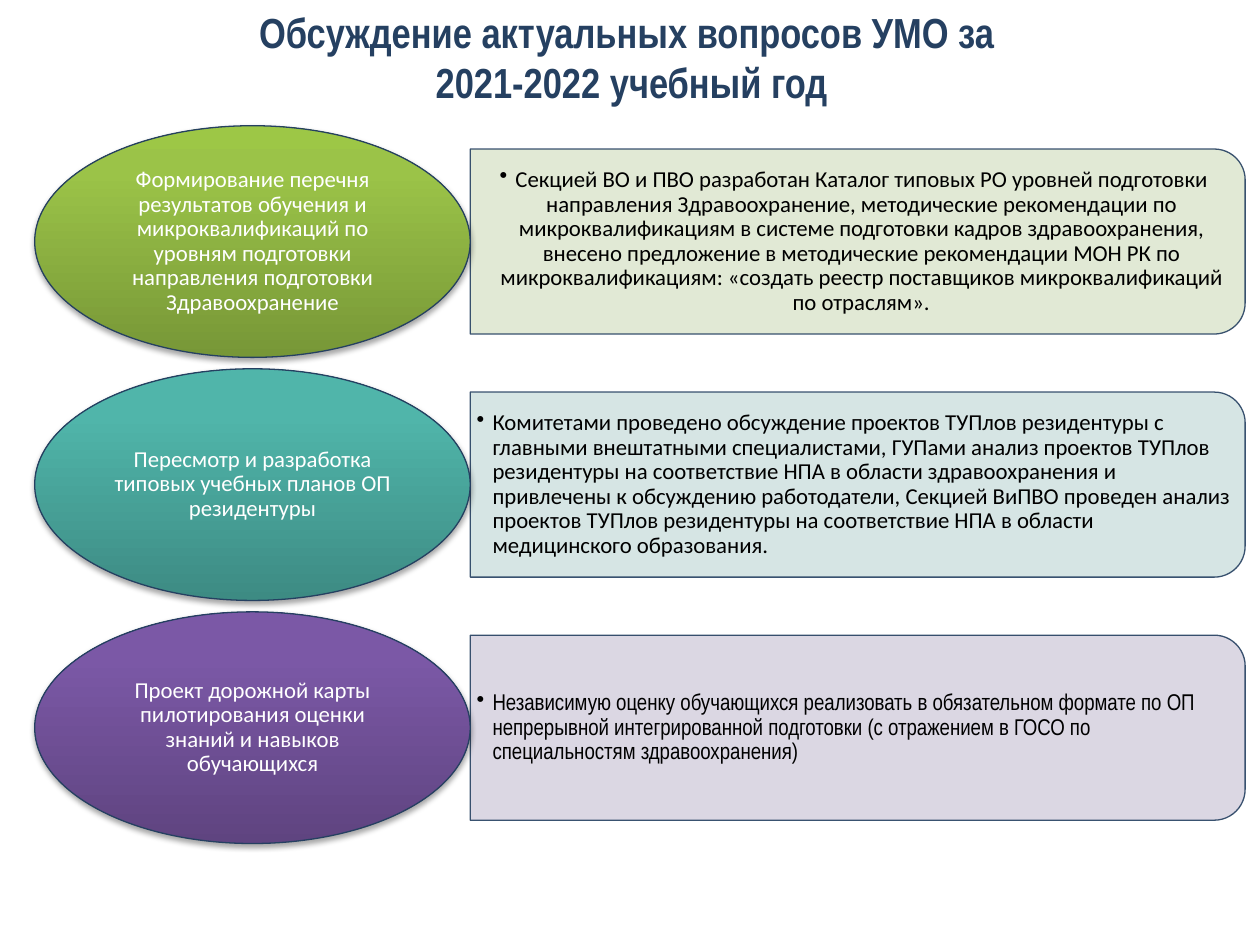
from dataclasses import dataclass

from pptx import Presentation
from pptx.dml.color import RGBColor
from pptx.enum.shapes import MSO_SHAPE
from pptx.enum.text import MSO_ANCHOR, PP_ALIGN
from pptx.oxml import parse_xml
from pptx.oxml.ns import nsdecls, qn
from pptx.util import Cm, Pt


@dataclass(frozen=True)
class Theme:
    navy: str = "254061"
    black: str = "000000"
    white: str = "FFFFFF"
    heading_font: str = "Arial Narrow"
    body_font: str = "Calibri"
    title_size: int = 24
    body_size: int = 13
    outline: float = 0.75


def color_xml(color, alpha):
    return (f'<a:srgbClr {nsdecls("a")} val="{color}">'
            f'<a:alpha val="{alpha * 1000}"/></a:srgbClr>')


def write_text(frame, text, *, font, size, color, bold=False, align=PP_ALIGN.CENTER,
               anchor=MSO_ANCHOR.MIDDLE, spacing=0.9, margins=(0.13, 0.08), bullet=False):
    frame.word_wrap = True
    frame.vertical_anchor = anchor
    frame.margin_left = frame.margin_right = Cm(margins[0])
    frame.margin_top = frame.margin_bottom = Cm(margins[1])
    paragraph = frame.paragraphs[0]
    paragraph.text = text
    paragraph.alignment = align
    paragraph.line_spacing = spacing
    for run in paragraph.runs:
        run.font.name = font
        run.font.size = Pt(size)
        run.font.bold = bold
        run.font.color.rgb = RGBColor.from_string(color)
    if bullet:
        properties = paragraph._p.get_or_add_pPr()
        properties.set("marL", str(Cm(0.32)))
        properties.set("indent", str(-Cm(0.32)))
        properties.append(parse_xml(f'<a:buChar {nsdecls("a")} char="•"/>'))


class SlideBuilder:
    """Draws the styled elements of one slide."""

    def __init__(self, slide, theme):
        self.slide = slide
        self.theme = theme

    def add_outlined(self, kind, left, top, width, height):
        shape = self.slide.shapes.add_shape(kind, Cm(left), Cm(top), Cm(width), Cm(height))
        shape.shadow.inherit = False
        shape.line.color.rgb = RGBColor.from_string(self.theme.navy)
        shape.line.width = Pt(self.theme.outline)
        return shape

    def add_text(self, text, left, top, width, height, **text_format):
        box = self.slide.shapes.add_textbox(Cm(left), Cm(top), Cm(width), Cm(height))
        write_text(box.text_frame, text, **text_format)

    def add_title(self, text):
        theme = self.theme
        self.add_text(text, 1.3, 0, 22.86, 3.18, font=theme.heading_font,
                      size=theme.title_size, color=theme.navy, bold=True,
                      anchor=MSO_ANCHOR.TOP, spacing=1.0, margins=(0.25, 0.13))

    def add_panel(self, text, middle, color, font, align):
        left, width, height = 9.48, 15.62, 3.73
        panel = self.add_outlined(MSO_SHAPE.ROUND_2_SAME_RECTANGLE,
                                  left + (width - height) / 2, middle - width / 2,
                                  height, width)
        panel.rotation = 90
        panel.fill.solid()
        panel.fill.fore_color.rgb = RGBColor.from_string(color)
        for fill in panel.element.spPr.iter(qn("a:solidFill")):
            fill[:] = [parse_xml(color_xml(fill[0].get("val"), 90))]
        text_height = 3.38
        self.add_text(text, left, middle - text_height / 2, 15.44, text_height,
                      font=font, size=self.theme.body_size, color=self.theme.black,
                      align=align, bullet=True)

    def add_topic(self, text, middle, colors):
        height = 4.67
        ellipse = self.add_outlined(MSO_SHAPE.OVAL, 0.7, middle - height / 2, 8.78, height)
        ellipse.fill.gradient()
        ellipse.fill.gradient_angle = 90
        properties = ellipse.element.spPr
        stops = properties.find(qn("a:gradFill")).find(qn("a:gsLst"))
        stops[:] = [parse_xml(f'<a:gs {nsdecls("a")} pos="{position * 1000}">'
                              f'{color_xml(color, 100)}</a:gs>')
                    for position, color in zip((0, 80, 100), colors)]
        properties.find(qn("a:effectLst")).append(parse_xml(
            f'<a:outerShdw {nsdecls("a")} blurRad="{Pt(3.1)}" dist="{Pt(1.8)}" '
            f'dir="5400000" rotWithShape="0">{color_xml(self.theme.black, 35)}</a:outerShdw>'))
        write_text(ellipse.text_frame, text, font=self.theme.body_font,
                   size=self.theme.body_size, color=self.theme.white)


def main():
    theme = Theme()
    presentation = Presentation()
    presentation.slide_width, presentation.slide_height = Cm(25.4), Cm(19.05)
    builder = SlideBuilder(presentation.slides.add_slide(presentation.slide_layouts[6]), theme)
    builder.add_title("Обсуждение актуальных вопросов УМО за \v2021-2022 учебный год")
    rows = [
        ("Формирование перечня результатов обучения и микроквалификаций по уровням "
         "подготовки направления подготовки Здравоохранение",
         ("779737", "9BC348", "9DC746"),
         "Секцией ВО и ПВО разработан Каталог типовых РО уровней подготовки направления "
         "Здравоохранение, методические рекомендации по микроквалификациям в системе "
         "подготовки кадров здравоохранения, внесено предложение в методические "
         "рекомендации МОН РК по микроквалификациям: «создать реестр поставщиков "
         "микроквалификаций по отраслям».",
         "DEE7D1", theme.body_font, PP_ALIGN.CENTER),
        ("Пересмотр и разработка типовых учебных планов ОП резидентуры",
         ("3D8B83", "50B5AA", "4EB8AC"),
         "Комитетами проведено обсуждение проектов ТУПлов резидентуры с главными "
         "внештатными специалистами, ГУПами анализ проектов ТУПлов резидентуры на "
         "соответствие НПА в области здравоохранения и привлечены к обсуждению "
         "работодатели, Секцией ВиПВО проведен анализ проектов ТУПлов резидентуры на "
         "соответствие НПА в области медицинского образования.",
         "D2E3E2", theme.body_font, PP_ALIGN.LEFT),
        ("Проект дорожной карты пилотирования оценки знаний и навыков обучающихся",
         ("5F4480", "7B58A6", "7C57A8"),
         "Независимую оценку обучающихся реализовать в обязательном формате по ОП "
         "непрерывной интегрированной подготовки (с отражением в ГОСО по специальностям "
         "здравоохранения)",
         "D8D3E0", theme.heading_font, PP_ALIGN.LEFT),
    ]
    for index, (topic, gradient, result, color, font, align) in enumerate(rows):
        middle = 4.87 + index * 4.9
        builder.add_panel(result, middle, color, font, align)
        builder.add_topic(topic, middle, gradient)
    presentation.save("out.pptx")


if __name__ == "__main__":
    main()
